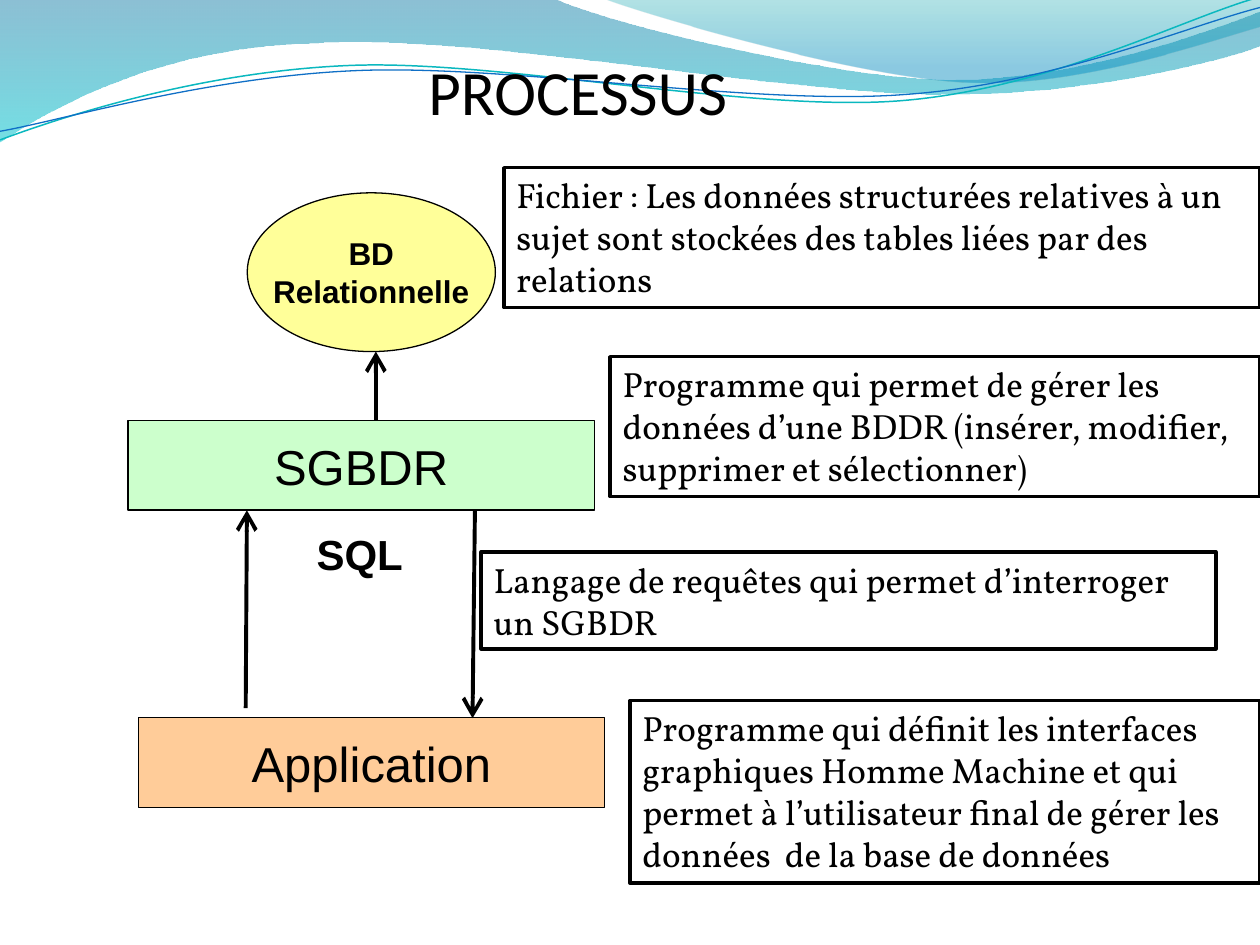
import pptx
import pptx.dml.color
import pptx.enum.shapes
import pptx.enum.text
import pptx.oxml.ns
import pptx.util

Pt = pptx.util.Pt
RGBColor = pptx.dml.color.RGBColor
SHAPE = pptx.enum.shapes.MSO_SHAPE
ALIGN = pptx.enum.text.PP_ALIGN
ANCHOR = pptx.enum.text.MSO_ANCHOR
AUTO_SIZE = pptx.enum.text.MSO_AUTO_SIZE
qn = pptx.oxml.ns.qn

BLACK = RGBColor(0x00, 0x00, 0x00)
WHITE = RGBColor(0xFF, 0xFF, 0xFF)
YELLOW = RGBColor(0xFF, 0xFF, 0x99)
GREEN = RGBColor(0xCC, 0xFF, 0xCC)
ORANGE = RGBColor(0xFF, 0xCC, 0x99)
DEEP_BLUE = RGBColor(0x00, 0x74, 0xA1)
CYAN = RGBColor(0x00, 0xC6, 0xCF)
TEAL = RGBColor(0x00, 0xA1, 0xA9)
SKY_BLUE = RGBColor(0x00, 0x8B, 0xBF)
TURQUOISE = RGBColor(0x0A, 0xB8, 0xBF)
ROYAL_BLUE = RGBColor(0x0F, 0x6F, 0xC6)

# Waves: a start point, then lines (x, y) or cubic curves (x1, y1, x2, y2, x, y).
# Bands add gradient stops (position, colour, opacity in percent).
BANDS = [
    ([(0, 0), (316.8, -0.7), (342.7, 12.2, 478.1, 45.4, 545.8, 45.4),
      (614.2, 45.4, 689.8, 18.7, 720, 6.5), (720.7, 25.9),
      (707.8, 31.7, 626.4, 54.7, 537.1, 54), (447.8, 54, 275, 20.2, 185, 24.5),
      (92.9, 25.9, 33.1, 59.8, -0.7, 81.4)],
     [(0, DEEP_BLUE, 45), (1, CYAN, 55)]),
    ([(344.9, -0.7), (366.5, 7.9, 491, 44.6, 553.7, 46.8),
      (616.3, 49.7, 691.9, 23, 720, 15.1), (720, 0)],
     [(0, TEAL, 30), (0.8, SKY_BLUE, 45)]),
]
STRAND_TILT = -2.7
STRANDS = [
    ([(-1.4, 63), (33.8, 51.7, 114.1, 29.4, 199.8, 29.9),
      (284.8, 30.3, 425.8, 67.3, 512.4, 64.9),
      (599, 62.4, 676.4, 25.7, 720.2, 15.6)], TURQUOISE, 0.85),
    ([(-1.1, 58), (32.9, 53.8, 118.3, 32.5, 204.1, 33),
      (290.6, 33.4, 428.9, 63.8, 515.5, 61.4),
      (601.3, 59.6, 678.4, 30.1, 721.4, 21.3)], ROYAL_BLUE, 0.75),
]

# Explanations: left, top, width, height within the notes region, and wording.
NOTES = [
    (13, 0, 432, 79.9, "Fichier : Les données structurées relatives à un sujet "
     "sont stockées des tables liées par des relations"),
    (73.7, 108, 371.5, 79.9, "Programme qui permet de gérer les données d’une BDDR "
     "(insérer, modifier, supprimer et sélectionner)"),
    (0, 219.6, 419.8, 55.4, "Langage de requêtes qui permet d’interroger un SGBDR"),
    (85, 304.5, 360, 104.4, "Programme qui définit les interfaces graphiques Homme "
     "Machine et qui permet à l’utilisateur final de gérer les données  de la base "
     "de données"),
]


def add_child(parent, tag, **attributes):
    child = parent.makeelement(qn(tag), attributes)
    parent.append(child)
    return child


def add_wave(slide, left, top, segments, closed):
    knots = [(Pt(left + s[-2]), Pt(top + s[-1])) for s in segments]
    builder = slide.shapes.build_freeform(*knots[0])
    builder.add_line_segments(knots[1:], close=closed)
    wave = builder.convert_to_shape()
    wave.shadow.inherit = False
    # Bend the straight segments that have control points
    for step, segment in zip(list(wave.element.iter(qn("a:lnTo"))), segments[1:]):
        if len(segment) == 6:
            curve = step.makeelement(qn("a:cubicBezTo"), {})
            for x, y in zip(segment[::2], segment[1::2]):
                add_child(curve, "a:pt", x=str(Pt(left + x) - wave.left),
                          y=str(Pt(top + y) - wave.top))
            step.getparent().replace(step, curve)
    return wave


def draw_waves(slide, left, top):
    for segments, stops in BANDS:
        band = add_wave(slide, left, top, segments, True)
        band.line.fill.background()
        band.fill.gradient()
        band.fill.gradient_angle = 270
        for stop, (position, color, _) in zip(band.fill.gradient_stops, stops):
            stop.position = position
            stop.color.rgb = color
        colors = list(band.element.spPr.iter(qn("a:srgbClr")))
        for color, (_, _, opacity) in zip(colors, stops):
            add_child(color, "a:alpha", val=str(opacity * 1000))
    for segments, color, weight in STRANDS:
        strand = add_wave(slide, left, top, segments, False)
        strand.rotation = STRAND_TILT
        strand.fill.background()
        strand.line.color.rgb = color
        strand.line.width = Pt(weight)


def write(frame, lines, size, font, align=ALIGN.LEFT, bold=False):
    for index, line in enumerate(lines):
        paragraph = frame.add_paragraph() if index else frame.paragraphs[0]
        paragraph.alignment = align
        run = paragraph.add_run()
        run.text = line
        run.font.size = Pt(size)
        run.font.name = font
        run.font.bold = bold
        run.font.color.rgb = BLACK


def draw_title(slide, left, top, width, height):
    title = slide.shapes.title
    title.left, title.top, title.width, title.height = map(Pt, (left, top, width, height))
    frame = title.text_frame
    frame.vertical_anchor = ANCHOR.BOTTOM
    frame.margin_left = frame.margin_right = frame.margin_bottom = 0
    write(frame, ["PROCESSUS"], 36, "Calibri", ALIGN.CENTER)
    # Bring the title in front of the waves
    title.element.getparent().append(title.element)


def add_block(slide, kind, box, fill, weight):
    block = slide.shapes.add_shape(kind, *map(Pt, box))
    block.shadow.inherit = False
    block.fill.solid()
    block.fill.fore_color.rgb = fill
    block.line.color.rgb = BLACK
    block.line.width = Pt(weight)
    return block


def add_arrow(slide, x1, y1, x2, y2):
    arrow = slide.shapes.add_connector(
        pptx.enum.shapes.MSO_CONNECTOR.STRAIGHT, *map(Pt, (x1, y1, x2, y2)))
    arrow.line.color.rgb = BLACK
    arrow.line.width = Pt(2.25)
    properties = arrow.element.spPr
    add_child(properties.find(qn("a:ln")), "a:tailEnd", type="arrow", w="lg", len="lg")
    add_child(properties, "a:effectLst")


def draw_flow(slide, left, top):
    # Database, DBMS and application
    for kind, x, y, width, height, fill, lines, size, bold in [
        (SHAPE.OVAL, 67.9, 0, 141.8, 90.7, YELLOW, ["BD", "Relationnelle"], 18, True),
        (SHAPE.RECTANGLE, -0.2, 130.2, 266.4, 51.1, GREEN, ["SGBDR"], 28, False),
        (SHAPE.RECTANGLE, 5.6, 300, 266.4, 51.1, ORANGE, ["Application"], 28, False),
    ]:
        block = add_block(slide, kind, (left + x, top + y, width, height), fill, 0.75)
        block.text_frame.word_wrap = False
        block.text_frame.vertical_anchor = ANCHOR.MIDDLE
        write(block.text_frame, lines, size, "Arial", ALIGN.CENTER, bold)
    # Exchanges between the layers
    for x1, y1, x2, y2 in [(141.4, 130.3, 141.4, 90.7),
                           (67, 294.4, 67.7, 181.4),
                           (198, 181.4, 196.6, 300.2)]:
        add_arrow(slide, left + x1, top + y1, left + x2, top + y2)
    sql = slide.shapes.add_textbox(Pt(left + 100.4), Pt(top + 188.3), Pt(64.1), Pt(36))
    sql.text_frame.word_wrap = False
    sql.text_frame.auto_size = AUTO_SIZE.SHAPE_TO_FIT_TEXT
    write(sql.text_frame, ["SQL"], 24, "Arial", bold=True)


def draw_notes(slide, left, top):
    for x, y, width, height, wording in NOTES:
        note = add_block(slide, SHAPE.RECTANGLE, (left + x, top + y, width, height), WHITE, 2)
        note.text_frame.word_wrap = True
        note.text_frame.auto_size = AUTO_SIZE.SHAPE_TO_FIT_TEXT
        note.text_frame.vertical_anchor = ANCHOR.TOP
        write(note.text_frame, [wording], 20, "Vollkorn")


def main():
    deck = pptx.Presentation()
    deck.slide_width, deck.slide_height = Pt(720), Pt(540)
    slide = deck.slides.add_slide(deck.slide_layouts[5])
    draw_waves(slide, 0, 0)
    draw_title(slide, 36, 21.6, 588.2, 51.8)
    draw_flow(slide, 73.4, 110.2)
    draw_notes(slide, 275, 95.8)
    deck.save("out.pptx")


if __name__ == "__main__":
    main()
